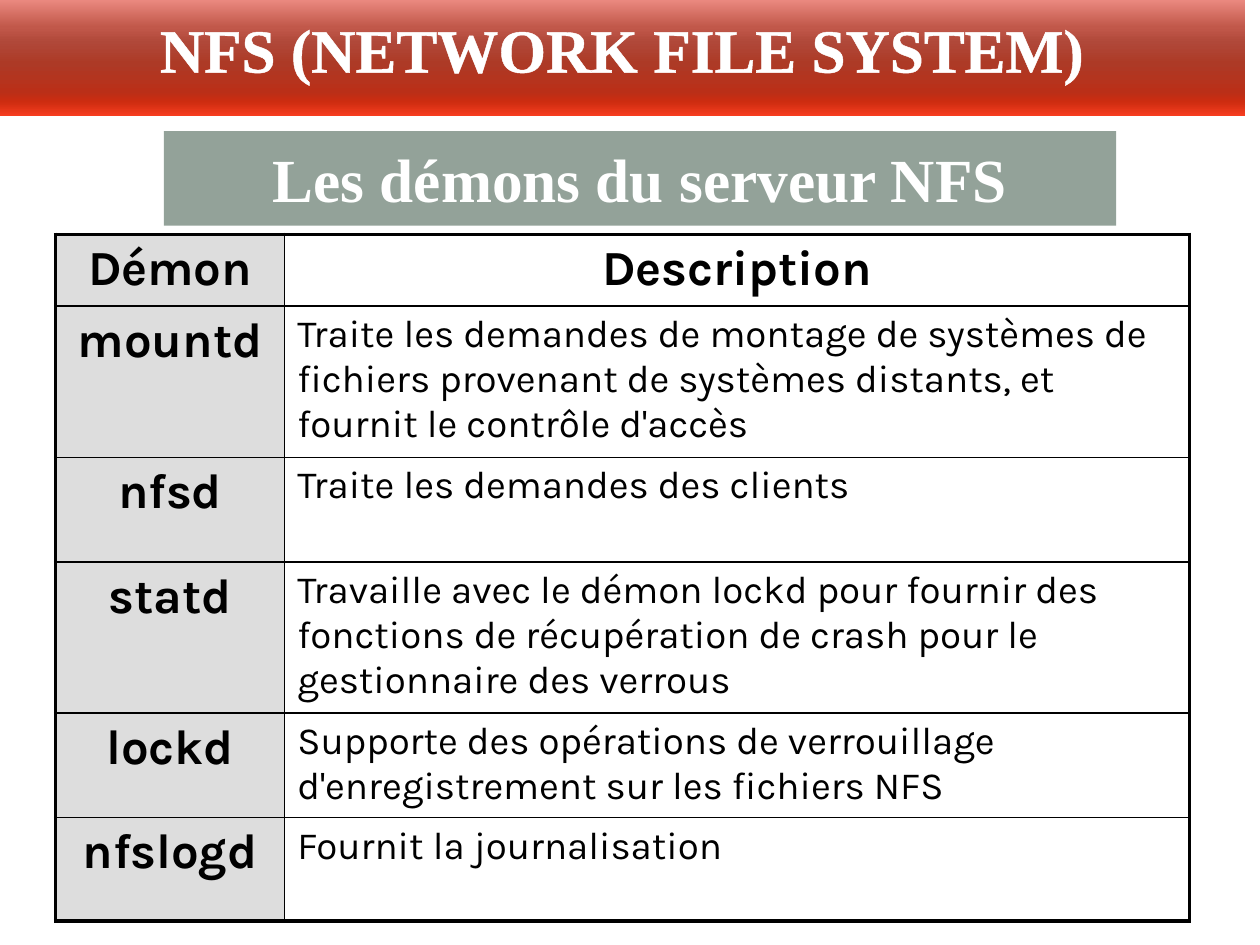
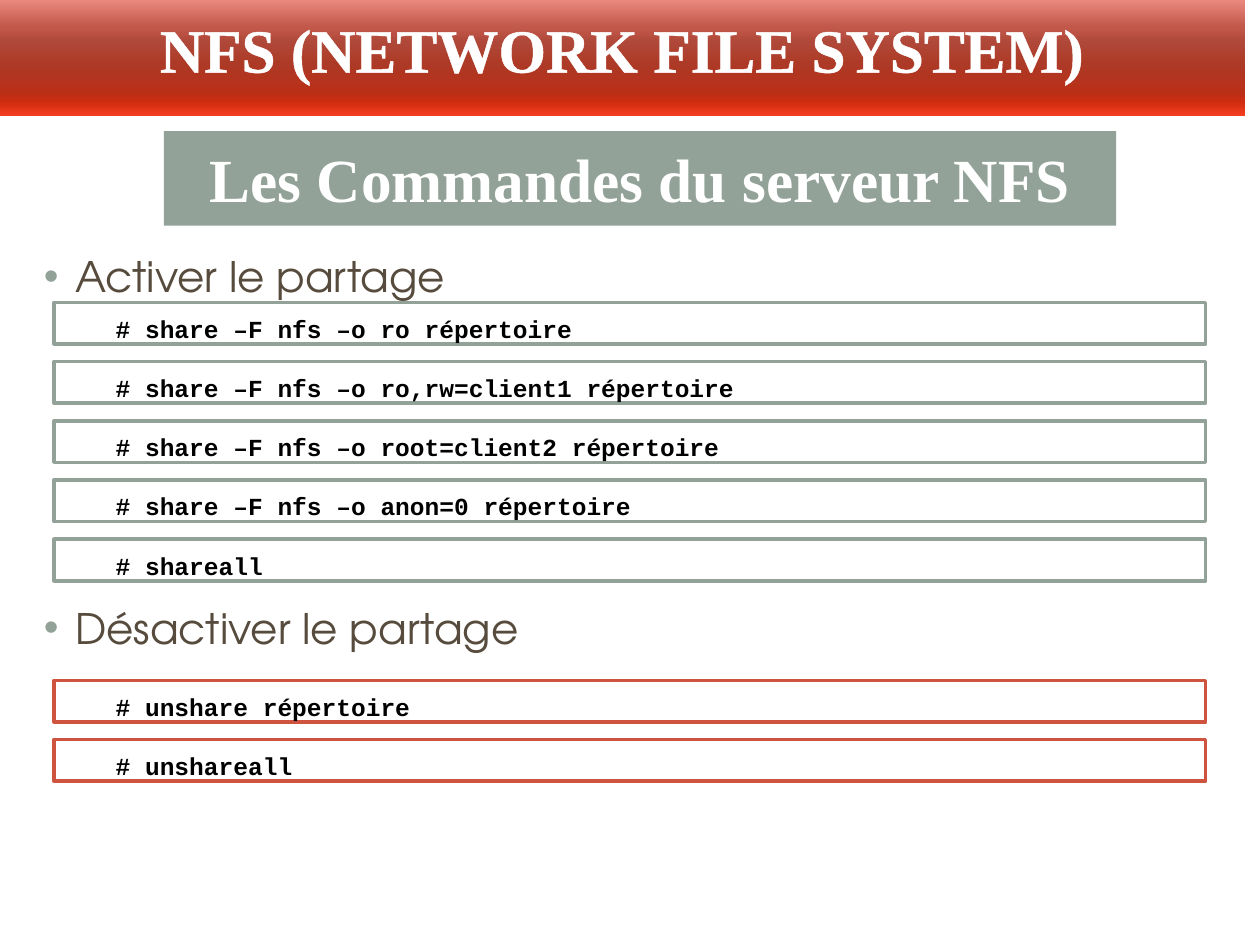
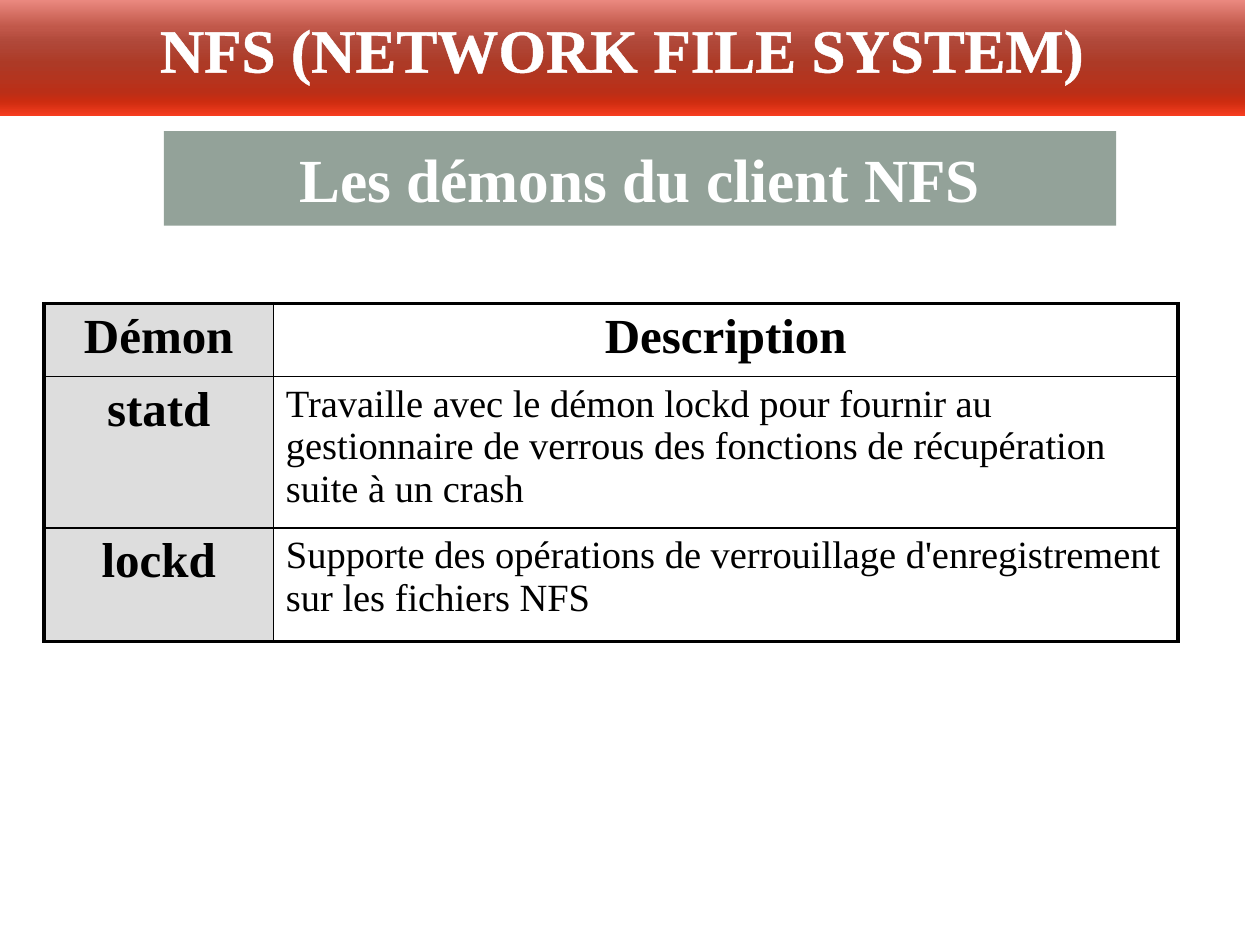
from dataclasses import dataclass

from lxml import etree
from pptx import Presentation
from pptx.dml.color import RGBColor
from pptx.enum.shapes import MSO_SHAPE as Shape
from pptx.enum.text import MSO_ANCHOR as Anchor, MSO_AUTO_SIZE as AutoSize, PP_ALIGN as Align
from pptx.oxml import parse_xml
from pptx.oxml.ns import nsdecls, qn
from pptx.util import Inches, Pt

# Content
TITLE = "NFS (NETWORK FILE SYSTEM)"
HEADER = ("Démon", "Description")
SERVER_DAEMONS = [
    ("mountd", "Traite les demandes de montage de systèmes de fichiers provenant "
               "de systèmes distants, et fournit le contrôle d'accès"),
    ("nfsd", "Traite les demandes des clients"),
    ("statd", "Travaille avec le démon lockd pour fournir des fonctions de "
              "récupération de crash pour le gestionnaire des verrous"),
    ("lockd", "Supporte des opérations de verrouillage d'enregistrement sur les fichiers NFS"),
    ("nfslogd", "Fournit la journalisation"),
]
CLIENT_DAEMONS = [
    ("statd", "Travaille avec le démon lockd pour fournir au gestionnaire de verrous "
              "des fonctions de récupération suite à un crash"),
    ("lockd", "Supporte des opérations de verrouillage d'enregistrement sur les fichiers NFS"),
]
COMMAND_HEADINGS = ("Activer le partage", "Désactiver le partage")
SHARE_COMMANDS = [
    "# share –F nfs –o ro répertoire",
    "# share –F nfs –o ro,rw=client1 répertoire",
    "# share –F nfs –o root=client2 répertoire",
    "# share –F nfs –o anon=0 répertoire",
    "# shareall",
]
UNSHARE_COMMANDS = ["# unshare répertoire", "# unshareall"]


@dataclass(frozen=True)
class Theme:
    white: str = "FFFFFF"
    black: str = "000000"
    sage: str = "93A299"
    red: str = "CF543F"
    brown: str = "564B3C"
    grey: str = "DDDDDD"
    band: tuple = ((0, "EF8E85"), (25, "C1584A"), (38, "B04839"), (55, "AD3A26"),
                   (80, "BA2F18"), (88, "CD2C10"), (100, "F63D1F"))
    serif: str = "Times New Roman"
    table_sans: str = "Karla"
    heading_sans: str = "TeX Gyre Adventor"
    mono: str = "Courier New"
    title_size: int = 35
    label_size: int = 28
    heading_size: int = 24
    body_size: int = 22
    command_size: int = 14
    outer_line: float = 2.25
    inner_line: float = 1


THEME = Theme()


# Shared helpers
def style(paragraph, font_name, size, color, bold=False, align=Align.LEFT):
    paragraph.alignment = align
    for span in paragraph.runs:
        span.font.name = font_name
        span.font.size = Pt(size)
        span.font.bold = bold
        span.font.color.rgb = RGBColor.from_string(color)


def place(shape, left, top, width, height):
    shape.left, shape.top = Inches(left), Inches(top)
    shape.width, shape.height = Inches(width), Inches(height)


def add_box(page, left, top, width, height, fill, line=None):
    box = page.shapes.add_shape(Shape.RECTANGLE, Inches(left), Inches(top),
                                Inches(width), Inches(height))
    box.shadow.inherit = False
    box.fill.solid()
    box.fill.fore_color.rgb = RGBColor.from_string(fill)
    if line:
        box.line.color.rgb = RGBColor.from_string(line)
        box.line.width = Pt(2)
    else:
        box.line.fill.background()
    return box


def solid_line(tag, width):
    color = THEME.white if tag == "ln" else THEME.black
    return parse_xml(f'<a:{tag} {nsdecls("a")} w="{Pt(width)}"><a:solidFill>'
                     f'<a:srgbClr val="{color}"/></a:solidFill></a:{tag}>')


def add_page(deck, subtitle):
    page = deck.slides.add_slide(deck.slide_layouts[5])

    # Title band
    title = page.shapes.title
    place(title, 0, -0.02, 9.88, 0.94)
    stops = "".join(f'<a:gs pos="{position * 1000}"><a:srgbClr val="{color}"/></a:gs>'
                    for position, color in THEME.band)
    title.fill.background()
    no_fill = title.element.spPr.find(qn("a:noFill"))
    no_fill.getparent().replace(no_fill, parse_xml(
        f'<a:gradFill {nsdecls("a")} rotWithShape="1"><a:gsLst>{stops}</a:gsLst>'
        '<a:lin ang="5400000" scaled="0"/></a:gradFill>'))
    frame = title.text_frame
    frame.text = TITLE
    frame.auto_size = AutoSize.NONE
    frame.vertical_anchor = Anchor.TOP
    frame.margin_top = Inches(0.11)
    style(frame.paragraphs[0], THEME.serif, THEME.title_size, THEME.white, True, Align.CENTER)
    for span in frame.paragraphs[0].runs:
        span.font._element.insert(0, solid_line("ln", 0.75))

    # Subtitle band
    box = add_box(page, 1.3, 1.04, 7.56, 0.75, THEME.sage)
    box.text_frame.text = subtitle
    box.text_frame.vertical_anchor = Anchor.MIDDLE
    style(box.text_frame.paragraphs[0], THEME.serif, THEME.title_size, THEME.white,
          True, Align.CENTER)
    return page


def set_borders(cell, at_edge):
    """Draw thick lines on the table's edge and thin ones inside."""
    properties = cell._tc.get_or_add_tcPr()
    for index, (tag, outer) in enumerate(zip(("lnL", "lnR", "lnT", "lnB"), at_edge)):
        width = THEME.outer_line if outer else THEME.inner_line
        properties.insert(index, solid_line(tag, width))


def add_daemon_table(page, left, top, daemons, row_heights, font_name):
    rows = [HEADER, *daemons]
    widths = (1.82, 7.18)
    table = page.shapes.add_table(len(rows), len(widths), Inches(left), Inches(top),
                                  Inches(sum(widths)), Inches(sum(row_heights))).table
    table.first_row = table.horz_banding = False
    for column, width in zip(table.columns, widths):
        column.width = Inches(width)
    for row_index, (row, height) in enumerate(zip(rows, row_heights)):
        table.rows[row_index].height = Inches(height)
        for column_index, text in enumerate(row):
            cell = table.cell(row_index, column_index)
            cell.text = text
            is_label = row_index == 0 or column_index == 0
            style(cell.text_frame.paragraphs[0], font_name,
                  THEME.label_size if is_label else THEME.body_size, THEME.black,
                  is_label, Align.CENTER if is_label else Align.LEFT)
            if column_index == 0:
                cell.fill.solid()
                cell.fill.fore_color.rgb = RGBColor.from_string(THEME.grey)
            else:
                cell.fill.background()
            set_borders(cell, (column_index == 0, column_index == len(row) - 1,
                               row_index == 0, row_index == len(rows) - 1))


def add_headings(page):
    box = page.shapes.add_textbox(Inches(0.12), Inches(1.94), Inches(9), Inches(5.39))
    frame = box.text_frame
    frame.word_wrap = True
    frame.text = "\n".join(COMMAND_HEADINGS)
    for paragraph in frame.paragraphs:
        properties = paragraph._p.get_or_add_pPr()
        properties.set("marL", str(Inches(0.38)))
        properties.set("indent", str(Inches(-0.25)))
        bullet_color = etree.SubElement(properties, qn("a:buClr"))
        etree.SubElement(bullet_color, qn("a:srgbClr"), val=THEME.sage)
        etree.SubElement(properties, qn("a:buFont"), typeface="Arial")
        etree.SubElement(properties, qn("a:buChar"), char="•")
        style(paragraph, THEME.heading_sans, THEME.heading_size, THEME.brown)
    frame.paragraphs[1].space_before = Pt(172)


def add_commands(page, top, commands, color):
    pitch = 0.47
    for index, command in enumerate(commands):
        box = add_box(page, 0.43, top + index * pitch, 9.14, 0.33, THEME.white, color)
        frame = box.text_frame
        frame.text = command
        frame.vertical_anchor = Anchor.TOP
        frame.margin_top, frame.margin_bottom = Inches(0.09), Inches(0.02)
        paragraph = frame.paragraphs[0]
        paragraph._p.get_or_add_pPr().set("marL", str(Inches(0.39)))
        style(paragraph, THEME.mono, THEME.command_size, THEME.black, True)


def main():
    deck = Presentation()
    deck.slide_width, deck.slide_height = Inches(10), Inches(7.5)

    # Server daemons
    page = add_page(deck, "Les démons du serveur NFS")
    add_daemon_table(page, 0.44, 1.86, SERVER_DAEMONS,
                     (0.57, 1.2, 0.83, 1.2, 0.83, 0.82), THEME.table_sans)

    # Server commands
    page = add_page(deck, "Les Commandes du serveur NFS")
    add_headings(page)
    add_commands(page, 2.4, SHARE_COMMANDS, THEME.sage)
    add_commands(page, 5.4, UNSHARE_COMMANDS, THEME.red)

    # Client daemons
    page = add_page(deck, "Les démons du client NFS")
    add_daemon_table(page, 0.35, 2.41, CLIENT_DAEMONS, (0.58, 1.2, 0.9), THEME.serif)

    deck.save("out.pptx")


if __name__ == "__main__":
    main()
